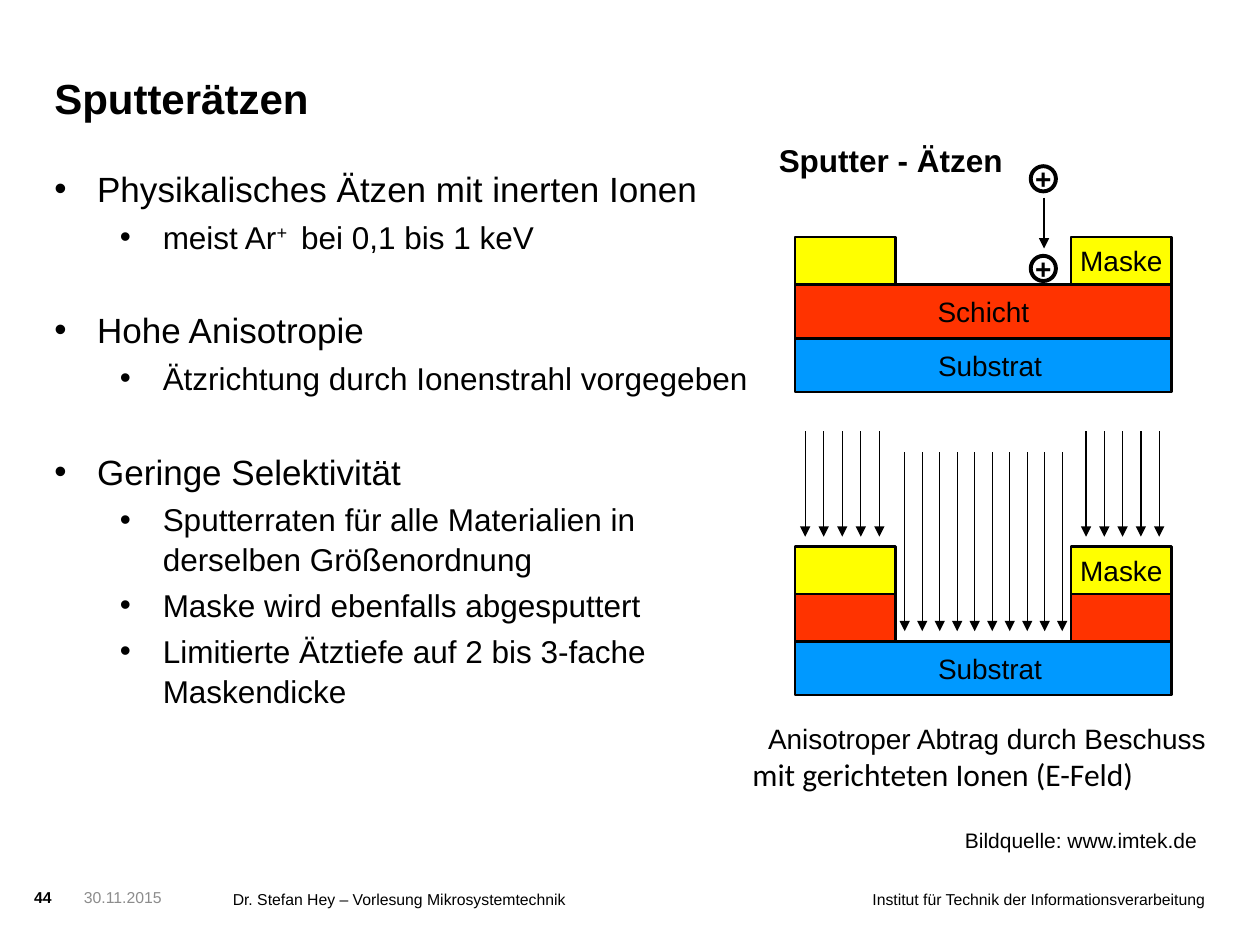
from lxml import etree
from pptx import Presentation
from pptx.dml.color import RGBColor
from pptx.enum import shapes, text
from pptx.oxml import ns
from pptx.util import Pt

BLACK, GREY = "000000", "8C8C8C"
YELLOW, RED, BLUE = "FFFF00", "FF3300", "0099FF"
LEFT, CENTER, RIGHT = text.PP_ALIGN.LEFT, text.PP_ALIGN.CENTER, text.PP_ALIGN.RIGHT
TOP, MIDDLE, BOTTOM = text.MSO_ANCHOR.TOP, text.MSO_ANCHOR.MIDDLE, text.MSO_ANCHOR.BOTTOM

# wording, (left, top, width, height), size, bold, colour, alignment, anchor
LABELS = [
    ("Sputterätzen", (31, 26, 544, 44), 24, True, BLACK, LEFT, BOTTOM),
    ("Sputter - Ätzen", (445, 80.5, 142, 22), 18, True, BLACK, LEFT, TOP),
    ("Anisotroper Abtrag durch Beschuss\nmit gerichteten Ionen (E-Feld)",
     (430, 412.5, 268, 40), 16, False, BLACK, CENTER, TOP),
    ("Bildquelle: www.imtek.de", (525.5, 473, 184.5, 15), 12, False, BLACK, CENTER, TOP),
    ("44", (19.5, 507.5, 26, 17), 9, True, BLACK, LEFT, TOP),
    ("30.11.2015", (48, 507.5, 82, 28), 9, False, GREY, LEFT, TOP),
    ("Dr. Stefan Hey – Vorlesung Mikrosystemtechnik",
     (133, 508.5, 215, 28), 9, False, BLACK, LEFT, TOP),
    ("Institut für Technik der Informationsverarbeitung",
     (473, 508.5, 215.5, 28), 9, False, BLACK, RIGHT, TOP),
]

# (topic, points); a tuple holds runs, every second one superscript
TOPICS = [
    ("Physikalisches Ätzen mit inerten Ionen",
     [("meist Ar", "+ ", " bei 0,1 bis 1 keV")]),
    ("Hohe Anisotropie", ["Ätzrichtung durch Ionenstrahl vorgegeben"]),
    ("Geringe Selektivität",
     ["Sputterraten für alle Materialien in\nderselben Größenordnung",
      "Maske wird ebenfalls abgesputtert",
      "Limitierte Ätztiefe auf 2 bis 3-fache\nMaskendicke"]),
]

STACK_LEFT, STACK_WIDTH, MASK_WIDTH = 454.3, 215.3, 57.6
MASK_RIGHT = STACK_LEFT + STACK_WIDTH - MASK_WIDTH
SUBSTRATE_INSET = 7.5
# left, top, width, height, fill, wording, left inset
LAYERS = [
    (STACK_LEFT, 135.4, MASK_WIDTH, 27.2, YELLOW, "", 0),
    (MASK_RIGHT, 135.4, MASK_WIDTH, 27.2, YELLOW, "Maske", 0),
    (STACK_LEFT, 162.7, STACK_WIDTH, 30.6, RED, "Schicht", 0),
    (STACK_LEFT, 193.5, STACK_WIDTH, 30.6, BLUE, "Substrat", SUBSTRATE_INSET),
    (STACK_LEFT, 366.5, STACK_WIDTH, 30.6, BLUE, "Substrat", SUBSTRATE_INSET),
    (STACK_LEFT, 339.3, MASK_WIDTH, 27.2, RED, "", 0),
    (MASK_RIGHT, 339.3, MASK_WIDTH, 27.2, RED, "", 0),
    (STACK_LEFT, 312.3, MASK_WIDTH, 27.2, YELLOW, "", 0),
    (MASK_RIGHT, 312.3, MASK_WIDTH, 27.2, YELLOW, "Maske", 0),
]

ION_LEFT, ION_SIZE = 589, 14.4
ION_TOPS = [95, 146.2]
# first x, step, count, top, bottom, line width
BEAMS = [
    (460.1, 10.6, 5, 246.5, 306.7, 0.75),
    (517, 10, 10, 258.5, 360.7, 0.75),
    (620.6, 10.45, 5, 246.5, 306.7, 0.75),
    (596.6, 0, 1, 113, 142, 1.5),
]


def color(hex_string):
    return RGBColor.from_string(hex_string)


def style(paragraph, size, bold=False, ink=BLACK):
    for run in paragraph.runs:
        run.font.name = "Arial"
        run.font.size = Pt(size)
        run.font.bold = bold
        run.font.color.rgb = color(ink)


def set_frame(frame, anchor, wrap=True, inset_left=0):
    frame.word_wrap = wrap
    frame.vertical_anchor = anchor
    frame.margin_left = Pt(inset_left)
    frame.margin_right = frame.margin_top = frame.margin_bottom = 0


def add_label(slide, wording, place, size, bold, ink, align, anchor):
    frame = slide.shapes.add_textbox(*map(Pt, place)).text_frame
    set_frame(frame, anchor)
    frame.text = wording
    frame.paragraphs[0].alignment = align
    style(frame.paragraphs[0], size, bold, ink)


def add_bullet(paragraph, content, size, margin, before):
    properties = paragraph._p.get_or_add_pPr()
    properties.set("marL", str(Pt(margin)))
    properties.set("indent", str(-Pt(24.5)))
    etree.SubElement(properties, ns.qn("a:buFont")).set("typeface", "Arial")
    etree.SubElement(properties, ns.qn("a:buChar")).set("char", "•")
    paragraph.line_spacing = 1.05
    paragraph.space_before = Pt(before)
    if isinstance(content, tuple):
        for position, part in enumerate(content):
            run = paragraph.add_run()
            run.text = part
            if position % 2:
                run.font._element.set("baseline", "30000")
    else:
        paragraph.text = content
    style(paragraph, size)


def add_topics(slide):
    frame = slide.shapes.add_textbox(Pt(31), Pt(94.5), Pt(658), Pt(385)).text_frame
    set_frame(frame, TOP)
    for number, (topic, points) in enumerate(TOPICS):
        heading = frame.add_paragraph() if number else frame.paragraphs[0]
        add_bullet(heading, topic, 20, 24.5, 29.3 if number else 0)
        for point in points:
            add_bullet(frame.add_paragraph(), point, 18, 62, 3.6)


def add_figure(slide, kind, place, fill, line_width, wording, bold=False, inset_left=0):
    """Outlined shape with centred 16 pt wording; no fill if fill is None."""
    figure = slide.shapes.add_shape(kind, *map(Pt, place))
    figure.shadow.inherit = False
    if fill:
        figure.fill.solid()
        figure.fill.fore_color.rgb = color(fill)
    else:
        figure.fill.background()
    figure.line.color.rgb = color(BLACK)
    figure.line.width = Pt(line_width)
    if wording:
        set_frame(figure.text_frame, MIDDLE, False, inset_left)
        figure.text_frame.text = wording
        figure.text_frame.paragraphs[0].alignment = CENTER
        style(figure.text_frame.paragraphs[0], 16, bold)


def add_arrow(slide, x, top, bottom, width):
    arrow = slide.shapes.add_connector(
        shapes.MSO_CONNECTOR.STRAIGHT, Pt(x), Pt(top), Pt(x), Pt(bottom))
    arrow.line.color.rgb = color(BLACK)
    arrow.line.width = Pt(width)
    etree.SubElement(arrow.line._get_or_add_ln(), ns.qn("a:tailEnd")).set("type", "triangle")
    etree.SubElement(arrow._element.spPr, ns.qn("a:effectLst"))


def main():
    deck = Presentation()
    deck.slide_width, deck.slide_height = Pt(720), Pt(540)
    slide = deck.slides.add_slide(deck.slide_layouts[6])
    for label in LABELS:
        add_label(slide, *label)
    add_topics(slide)
    for left, top, width, height, fill, wording, inset_left in LAYERS:
        add_figure(slide, shapes.MSO_SHAPE.RECTANGLE, (left, top, width, height),
                   fill, 1.5, wording, inset_left=inset_left)
    for top in ION_TOPS:
        add_figure(slide, shapes.MSO_SHAPE.OVAL, (ION_LEFT, top, ION_SIZE, ION_SIZE),
                   None, 2.25, "+", bold=True)
    for first, step, count, top, bottom, width in BEAMS:
        for number in range(count):
            add_arrow(slide, first + number * step, top, bottom, width)
    deck.save("out.pptx")


if __name__ == "__main__":
    main()
